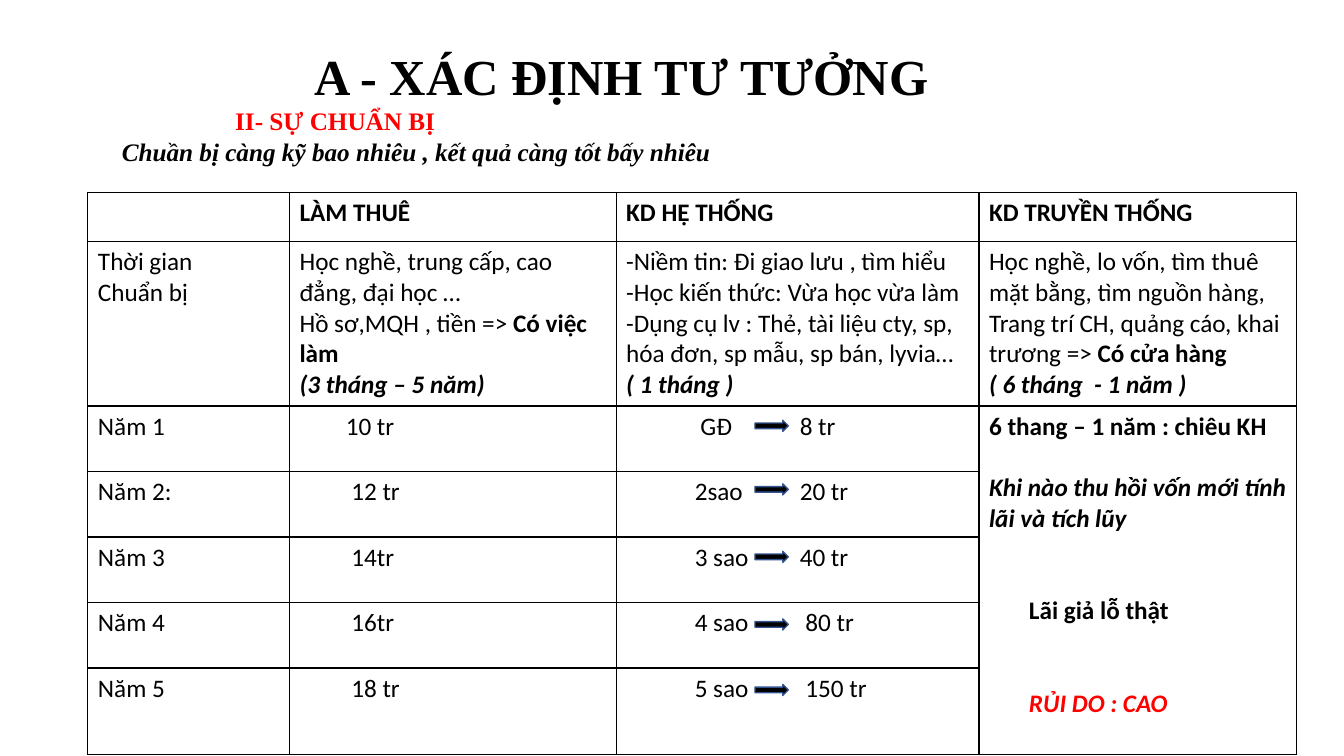
from dataclasses import dataclass

from lxml import etree
from pptx import Presentation
from pptx.dml.color import RGBColor
from pptx.enum import shapes, text
from pptx.oxml import ns
from pptx.util import Pt

BLACK = RGBColor(0x00, 0x00, 0x00)
WHITE = RGBColor(0xFF, 0xFF, 0xFF)
RED = RGBColor(0xFF, 0x00, 0x00)
ARROW_EDGE = RGBColor(0x32, 0x54, 0x91)
HEADING_FONT, TABLE_FONT = "Times New Roman", "Calibri"
COLUMN_WIDTHS = (144, 233.3, 259.2, 226.8)
ROW_HEIGHTS = (35.3, 117.4, 46.8, 46.8, 46.8, 46.8, 61.9)


@dataclass
class Line:
    """One paragraph; tail is a bold ending after plain words."""
    words: str
    bold: bool = False
    italic: bool = False
    color: RGBColor = BLACK
    size: float = 18
    indent: float = 0
    before: float = 0
    spacing: float = 1.0
    tabs: tuple = ()
    tail: str = ""


HEADERS = ("LÀM THUÊ", "KD HỆ THỐNG", "KD TRUYỀN THỐNG")
PREPARATION = (
    [Line("Thời gian"), Line("Chuẩn bị")],
    [Line("Học nghề, trung cấp, cao đẳng, đại học …"),
     Line("Hồ sơ,MQH , tiền => ", tail="Có việc làm"),
     Line("(3 tháng – 5 năm)", bold=True, italic=True)],
    [Line("-Niềm tin: Đi giao lưu , tìm hiểu"),
     Line("-Học kiến thức: Vừa học vừa làm"),
     Line("-Dụng cụ lv : Thẻ, tài liệu cty, sp, hóa đơn, sp mẫu, sp bán, lyvia…"),
     Line("( 1 tháng )", bold=True, italic=True)],
    [Line("Học nghề, lo vốn, tìm thuê mặt bằng, tìm nguồn hàng,"),
     Line("Trang trí CH, quảng cáo, khai trương => ", tail="Có cửa hàng"),
     Line("( 6 tháng  - 1 năm )", bold=True, italic=True)],
)
YEARS = (
    ("Năm 1", "10 tr", 33, "GĐ", 53, "8 tr", 124, 300.2),
    ("Năm 2:", "12 tr", 37, "2sao", 49, "20 tr", 124, 345.6),
    ("Năm 3", "14tr", 37, "3 sao", 49, "40 tr", 124, 393.8),
    ("Năm 4", "16tr", 37, "4 sao", 49, "80 tr", 128, 442.1),
    ("Năm 5", "18 tr", 37, "5 sao", 49, "150 tr", 128, 488.9),
)
RISKS = [
    Line("6 thang – 1 năm : chiêu KH", bold=True),
    Line("Khi nào thu hồi vốn mới tính lãi và tích lũy", bold=True, italic=True, before=22),
    Line("Lãi giả lỗ thật", bold=True, indent=28.5, before=44),
    Line("RỦI DO : CAO", bold=True, italic=True, color=RED, indent=28.5, before=44),
]


def write_lines(frame, lines, font_name):
    """Fill a text frame with the given lines."""
    for index, line in enumerate(lines):
        paragraph = frame.paragraphs[0] if index == 0 else frame.add_paragraph()
        properties = paragraph._p.get_or_add_pPr()
        if line.indent:
            properties.set("marL", str(Pt(line.indent)))
            properties.set("indent", "0")
        if line.tabs:
            stops = etree.SubElement(properties, ns.qn("a:tabLst"))
            for position in line.tabs:
                etree.SubElement(stops, ns.qn("a:tab"), pos=str(Pt(position)), algn="l")
        if line.before:
            paragraph.space_before = Pt(line.before)
        if line.spacing != 1:
            paragraph.line_spacing = line.spacing
        font = paragraph.font
        font.name, font.size = font_name, Pt(line.size)
        font.italic = line.italic
        font.color.rgb = line.color
        opening = paragraph.add_run()
        opening.text = line.words
        if line.tail:
            ending = paragraph.add_run()
            ending.text = line.tail
            opening.font.bold, ending.font.bold = False, True
        else:
            font.bold = line.bold


def add_heading(slide, left, top, width, height, lines):
    """Add a wrapped text box that grows with its lines."""
    frame = slide.shapes.add_textbox(Pt(left), Pt(top), Pt(width), Pt(height)).text_frame
    frame.word_wrap = True
    frame.auto_size = text.MSO_AUTO_SIZE.SHAPE_TO_FIT_TEXT
    write_lines(frame, lines, HEADING_FONT)


def style_cell(cell):
    """Give a cell black borders and a white fill."""
    properties = cell._tc.get_or_add_tcPr()
    for side in ("lnL", "lnR", "lnT", "lnB"):
        border = etree.SubElement(properties, ns.qn(f"a:{side}"), w=str(Pt(1)))
        paint = etree.SubElement(border, ns.qn("a:solidFill"))
        etree.SubElement(paint, ns.qn("a:srgbClr"), val=str(BLACK))
    cell.fill.solid()
    cell.fill.fore_color.rgb = WHITE


def add_comparison(slide):
    """Add the table that compares the three ways of earning."""
    table = slide.shapes.add_table(
        len(ROW_HEIGHTS), len(COLUMN_WIDTHS), Pt(62.8), Pt(137.3),
        Pt(sum(COLUMN_WIDTHS)), Pt(sum(ROW_HEIGHTS))).table
    table.first_row = table.horz_banding = False
    for column, width in zip(table.columns, COLUMN_WIDTHS):
        column.width = Pt(width)
    for row, height in zip(table.rows, ROW_HEIGHTS):
        row.height = Pt(height)
    for cell in table.iter_cells():
        style_cell(cell)
    table.cell(2, 3).merge(table.cell(6, 3))

    rows = [[[]] + [[Line(header, bold=True)] for header in HEADERS], PREPARATION]
    for year, wage, wage_indent, rank, rank_tab, income, income_tab, _ in YEARS:
        rows.append([[Line(year)], [Line(wage, indent=wage_indent)],
                     [Line(f"\t{rank}\t{income}", tabs=(rank_tab, income_tab))]])
    rows[2].append(RISKS)
    for row_index, row in enumerate(rows):
        for column_index, lines in enumerate(row):
            write_lines(table.cell(row_index, column_index).text_frame, lines, TABLE_FONT)


def add_arrow(slide, top):
    """Add the arrow from a rank to its income."""
    arrow = slide.shapes.add_shape(
        shapes.MSO_SHAPE.RIGHT_ARROW, Pt(539.3), Pt(top), Pt(23.8), Pt(7.9))
    arrow.shadow.inherit = False
    arrow.fill.solid()
    arrow.fill.fore_color.rgb = BLACK
    arrow.line.color.rgb = ARROW_EDGE
    arrow.line.width = Pt(1)


def main():
    """Build and save the slide."""
    deck = Presentation()
    deck.slide_width, deck.slide_height = Pt(960), Pt(540)
    slide = deck.slides.add_slide(deck.slide_layouts[6])
    add_heading(slide, 79.9, 72, 480.2, 51.1, [
        Line("II- SỰ CHUẨN BỊ", bold=True, color=RED, indent=81),
        Line("Chuần bị càng kỹ bao nhiêu , kết quả càng tốt bấy nhiêu", bold=True, italic=True)])
    add_heading(slide, 217.4, 7.2, 480.2, 64.8, [
        Line("A - XÁC ĐỊNH TƯ TƯỞNG", bold=True, size=36, spacing=1.5)])
    add_comparison(slide)
    for *_, arrow_top in YEARS:
        add_arrow(slide, arrow_top)
    deck.save("out.pptx")


if __name__ == "__main__":
    main()
